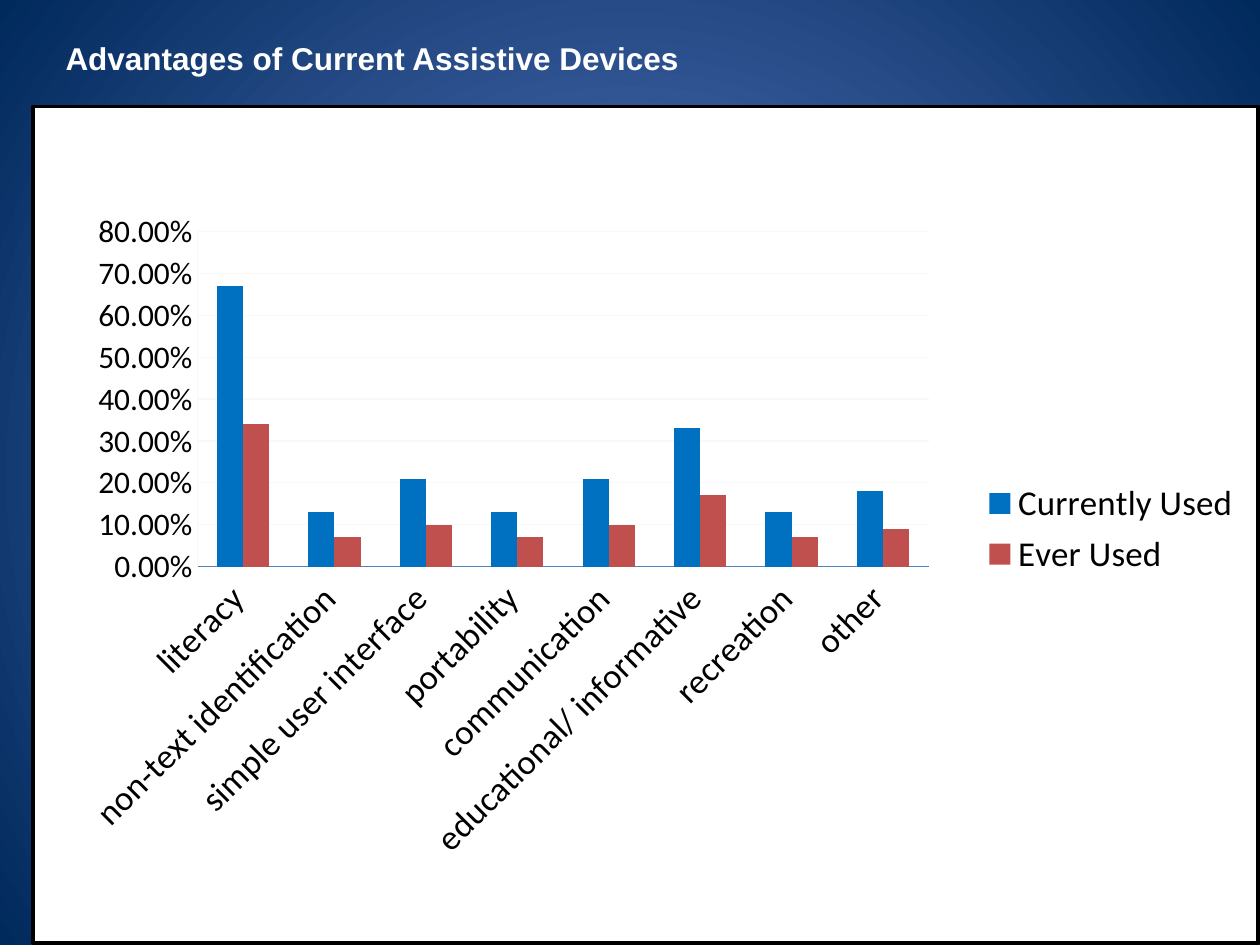
from lxml.etree import SubElement
from pptx import Presentation
from pptx.chart.data import CategoryChartData
from pptx.dml.color import RGBColor
from pptx.enum.chart import XL_CHART_TYPE as ChartType, XL_LEGEND_POSITION as LegendPosition
from pptx.enum.chart import XL_TICK_MARK as TickMark
from pptx.enum.text import MSO_ANCHOR as Anchor, PP_ALIGN as Align
from pptx.oxml import parse_xml
from pptx.oxml.ns import nsdecls, qn
from pptx.util import Inches, Pt

# Content
TITLE = "Advantages of Current Assistive Devices"
CATEGORIES = ["literacy ", "non-text identification ", "simple user interface ", "portability ",
              "communication ", "educational/ informative ", "recreation ", "other "]
SERIES = [
    ("Currently Used", "current", [0.67, 0.13, 0.21, 0.13, 0.21, 0.33, 0.13, 0.18]),
    ("Ever Used", "ever", [0.34, 0.07, 0.10, 0.07, 0.10, 0.17, 0.07, 0.09]),
]
COLORS = {"center": "5E7CC5", "edge": "00295C", "white": "FFFFFF", "black": "000000",
          "current": "0070C0", "ever": "C0504D", "axis": "4F81BD", "grid": "F8F8F8"}

# Shares of the chart's size: left, top, width, height
PLOT_AREA = (0.134, 0.15, 0.597, 0.4)
LEGEND_AREA = (0.77, 0.44, 0.22, 0.13)


def color(name):
    return RGBColor.from_string(COLORS[name])


def style_line(line, name, width):
    line.color.rgb = color(name)
    line.width = Pt(width)


def manual_layout(area, inner=False):
    target = '<c:layoutTarget val="inner"/>' if inner else ""
    modes = "".join(f'<c:{side}Mode val="edge"/>' for side in "xy")
    sizes = "".join(f'<c:{side} val="{share}"/>' for side, share in zip("xywh", area))
    return parse_xml(f'<c:layout {nsdecls("c")}><c:manualLayout>{target}{modes}{sizes}'
                     '</c:manualLayout></c:layout>')


def remove_layout(element):
    for layout in element.findall(qn("c:layout")):
        element.remove(layout)


presentation = Presentation()
presentation.slide_width, presentation.slide_height = Inches(10), Inches(7.5)
slide = presentation.slides.add_slide(presentation.slide_layouts[5])

# Background: circular gradient
fill = slide.background.fill
fill.gradient()
for stop, name in zip(fill.gradient_stops, ("center", "edge")):
    stop.color.rgb = color(name)
gradient = slide.background._cSld.find(".//" + qn("a:gradFill"))
for linear in gradient.findall(qn("a:lin")):
    gradient.remove(linear)
circle = SubElement(gradient, qn("a:path"), path="circle")
SubElement(circle, qn("a:fillToRect"), {side: "50000" for side in "ltrb"})

# Title
title = slide.shapes.title
title.left, title.top, title.width, title.height = map(Inches, (0.42, 0.25, 5.12, 0.42))
frame = title.text_frame
frame.text = TITLE
frame.word_wrap = False
frame.vertical_anchor = Anchor.MIDDLE
paragraph = frame.paragraphs[0]
paragraph.alignment = Align.LEFT
paragraph.font.name, paragraph.font.size, paragraph.font.bold = "Arial", Pt(18), True
paragraph.font.color.rgb = color("white")

# Chart
data = CategoryChartData(number_format="0.00%")
data.categories = CATEGORIES
for name, _, values in SERIES:
    data.add_series(name, values)
chart = slide.shapes.add_chart(ChartType.COLUMN_CLUSTERED, *map(Inches, (0.25, 0.83, 9.75, 6.67)),
                               data).chart
chart.has_title = False
chart.font.name, chart.font.size = "Calibri", Pt(10)
chart.font.color.rgb = color("black")

plot = chart.plots[0]
plot.gap_width, plot.overlap, plot.vary_by_categories = 150, 0, False
for series, (_, key, _) in zip(plot.series, SERIES):
    series.format.fill.solid()
    series.format.fill.fore_color.rgb = color(key)

# Axes
category_axis, value_axis = chart.category_axis, chart.value_axis
for axis, size, line_color in ((category_axis, 20, "axis"), (value_axis, 18, "grid")):
    axis.major_tick_mark = axis.minor_tick_mark = TickMark.NONE
    axis.tick_labels.font.size = Pt(size)
    style_line(axis.format.line, line_color, 0.75)
category_axis._element.find(qn("c:txPr")).find(qn("a:bodyPr")).set("rot", "-2700000")
value_axis.minimum_scale, value_axis.maximum_scale, value_axis.major_unit = 0, 0.8, 0.1
value_axis.tick_labels.number_format = "0.00%"
value_axis.tick_labels.number_format_is_linked = False
value_axis.has_major_gridlines = True
style_line(value_axis.major_gridlines.format.line, "grid", 0.75)

# Legend and plot positions
chart.has_legend = True
legend = chart.legend
legend.position = LegendPosition.RIGHT
legend.include_in_layout = False
legend.font.size = Pt(20)
remove_layout(legend._element)
legend._element.find(qn("c:legendPos")).addnext(manual_layout(LEGEND_AREA))
plot_area = chart._chartSpace.find(".//" + qn("c:plotArea"))
remove_layout(plot_area)
plot_area.insert(0, manual_layout(PLOT_AREA, inner=True))

# White chart panel with a black border
chart._chartSpace.find(qn("c:chart")).addnext(parse_xml(
    f'<c:spPr {nsdecls("c", "a")}>'
    f'<a:solidFill><a:srgbClr val="{COLORS["white"]}"/></a:solidFill>'
    f'<a:ln w="{Pt(2)}"><a:solidFill><a:srgbClr val="{COLORS["black"]}"/></a:solidFill></a:ln>'
    '</c:spPr>'))

presentation.save("out.pptx")
